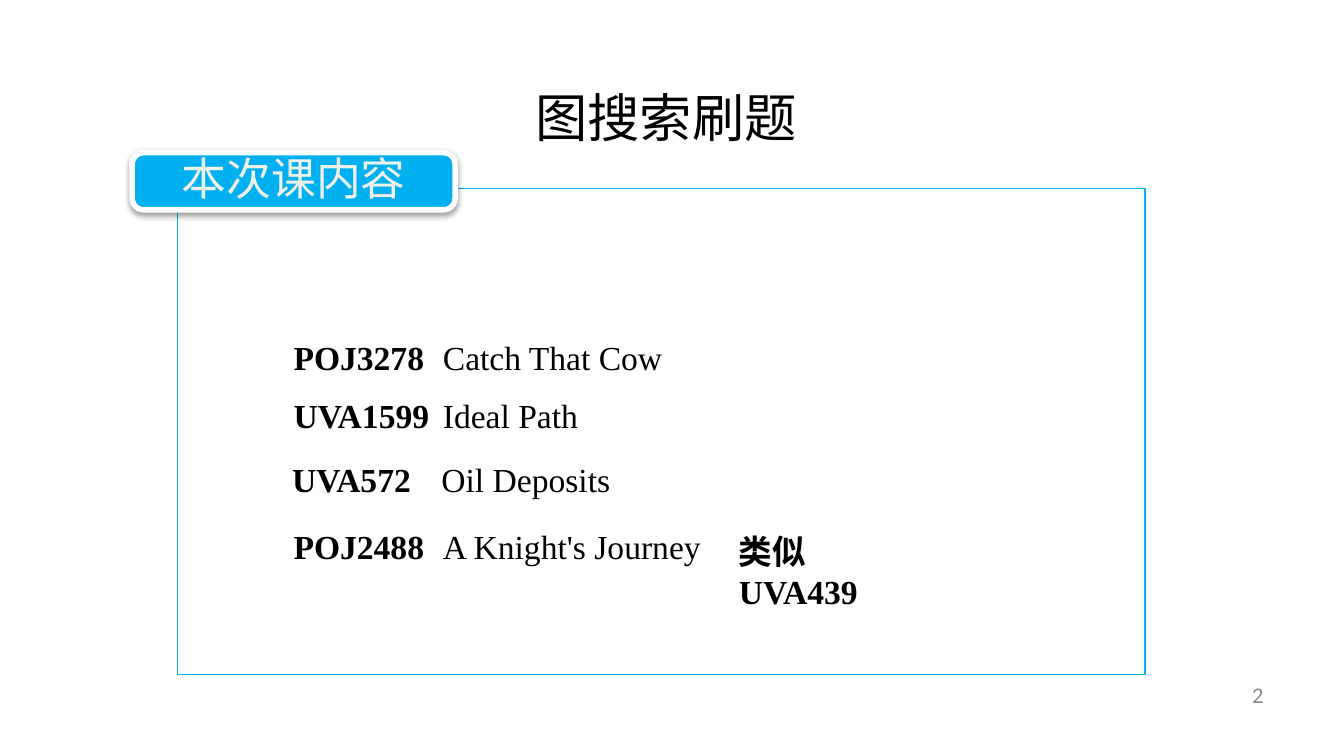
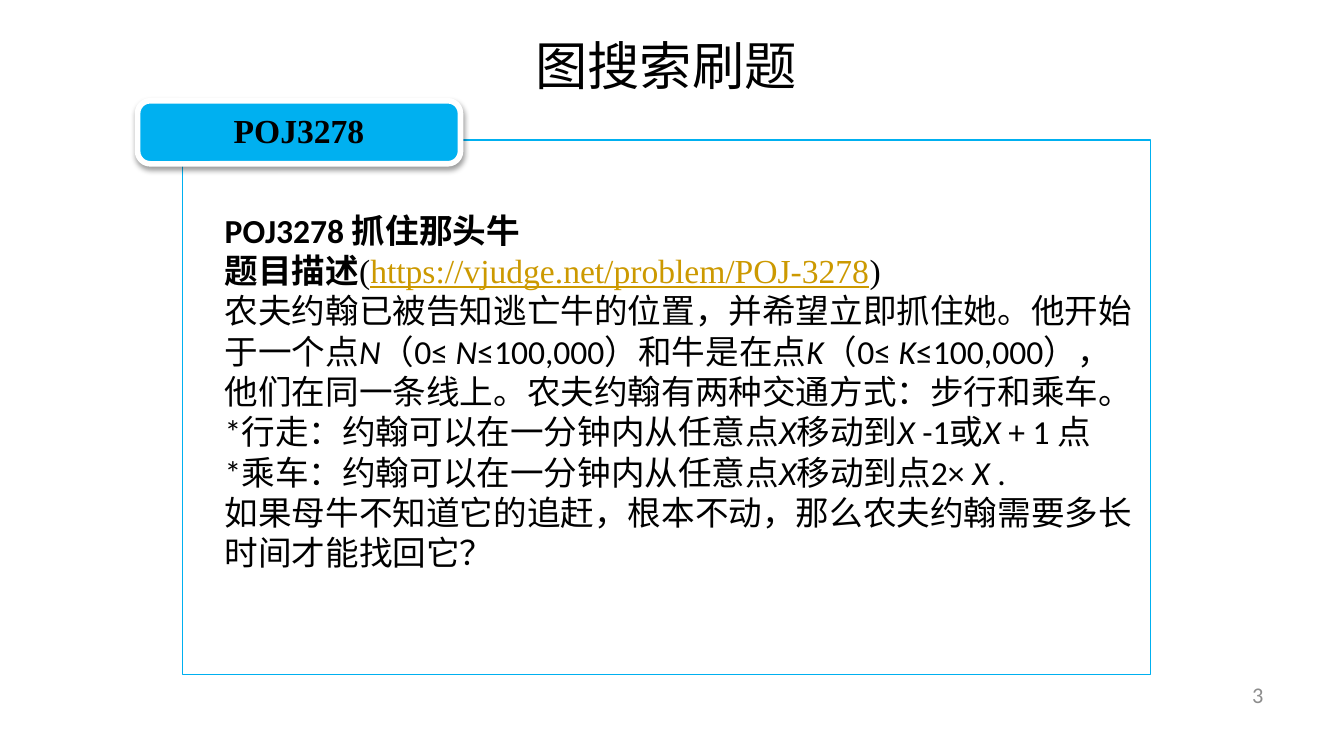
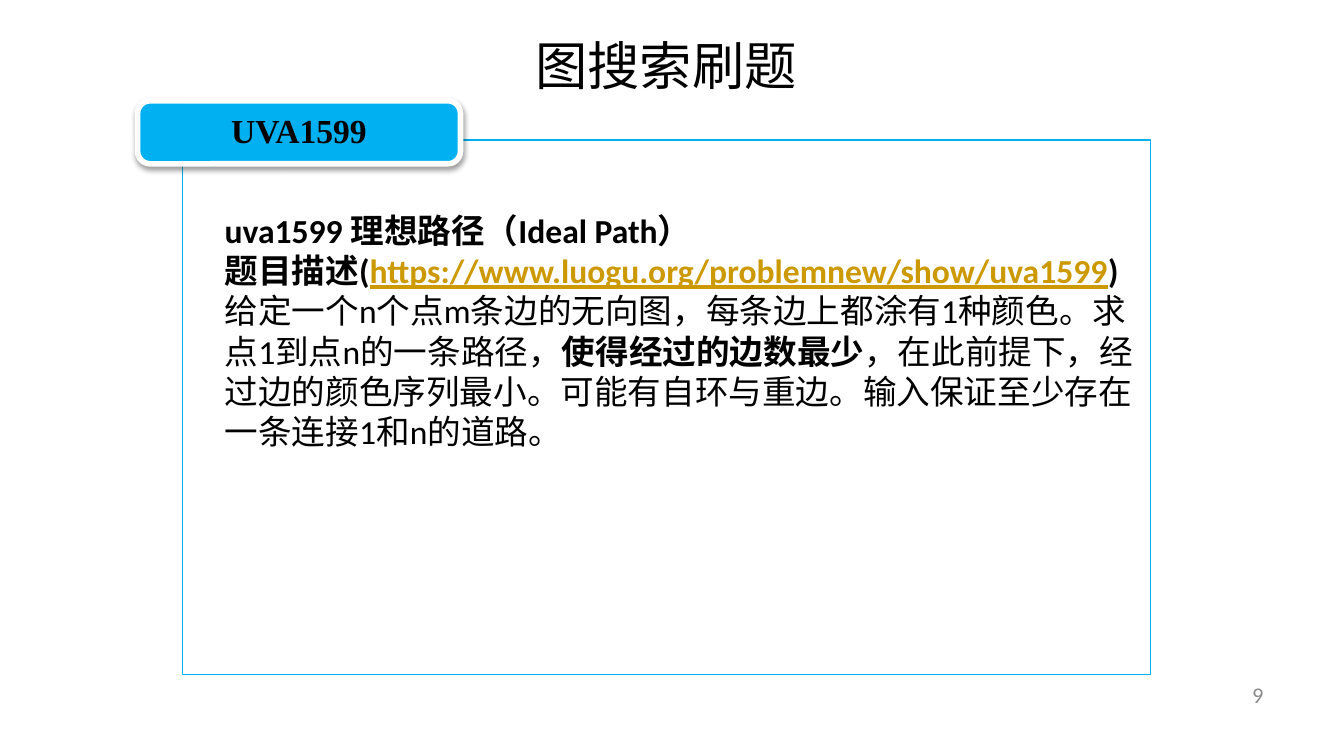
"""Build three slides of graph search exercises, each with a framed panel and a tag."""
from lxml import etree
from pptx import Presentation
from pptx.dml.color import RGBColor
from pptx.enum.shapes import MSO_SHAPE
from pptx.enum.text import MSO_ANCHOR, MSO_AUTO_SIZE, PP_ALIGN
from pptx.oxml.ns import qn
from pptx.util import Pt

RECT, ROUNDED = MSO_SHAPE.RECTANGLE, MSO_SHAPE.ROUNDED_RECTANGLE
TOP, MIDDLE = MSO_ANCHOR.TOP, MSO_ANCHOR.MIDDLE
CENTER, RIGHT, LEFT = PP_ALIGN.CENTER, PP_ALIGN.RIGHT, PP_ALIGN.LEFT
NO_FIT = MSO_AUTO_SIZE.NONE

SANS, SERIF, CJK = "Calibri", "Times New Roman", "Noto Sans CJK SC"
BLACK, WHITE, BLUE = "000000", "FFFFFF", "00B0F0"
GOLD, GREY, PALE = "CC9900", "8C8C8C", "EFF1EA"
NBSP = chr(160)


def rgb(code):
    """Turn a hex string into a colour."""
    return RGBColor.from_string(code)


def add_run(p, text, size=18, font=SANS, color=BLACK, style=""):
    """Add a run; style letters are b for bold, i for italic, u for underline."""
    r = p.add_run()
    r.text = text
    r.font.size = Pt(size)
    r.font.name = font
    r.font.color.rgb = rgb(color)
    r.font.bold = "b" in style
    r.font.italic = "i" in style
    r.font.underline = "u" in style
    etree.SubElement(r.font._element, qn("a:ea"), typeface=CJK)


slides = [
    dict(number="2", title_top=30.4, left=95, top=101, height=260.4,
         tag_top=81.8, tag_height=30.6, tag=("本次课内容", 24, SANS, PALE, ""), body=[]),
    dict(number="3", title_top=2.6, left=97.9, top=75, height=286.2,
         tag_top=54, tag_height=33.8, tag=("POJ3278", 18, SERIF, BLACK, "b"), body=[
             [("POJ3278 抓住那头牛", SANS, "b")],
             [("题目描述", SANS, "b"), ("(", SERIF, ""),
              ("https://vjudge.net/problem/POJ-3278", SERIF, "u"), (")", SERIF, "")],
             [("农夫约翰已被告知逃亡牛的位置，并希望立即抓住她。他开始于一个点", SANS, ""),
              ("N", SANS, "i"), (f"（0≤{NBSP}", SANS, ""), ("N", SANS, "i"),
              ("≤100,000）和牛是在点", SANS, ""), ("K", SANS, "i"),
              (f"（0≤{NBSP}", SANS, ""), ("K", SANS, "i"),
              ("≤100,000），他们在同一条线上。农夫约翰有两种交通方式：步行和乘车。", SANS, "")],
             [("*行走：约翰可以在一分钟内从任意点", SANS, ""), ("X", SANS, "i"),
              ("移动到", SANS, ""), ("X", SANS, "i"), (f"{NBSP}-1或", SANS, ""),
              ("X", SANS, "i"), (f"{NBSP}+ 1{NBSP}点", SANS, "")],
             [("*乘车：约翰可以在一分钟内从任意点", SANS, ""), ("X", SANS, "i"),
              (f"移动到点2×{NBSP}", SANS, ""), ("X", SANS, "i"), (f"{NBSP}.", SANS, "")],
             [("如果母牛不知道它的追赶，根本不动，那么农夫约翰需要多长时间才能找回它？", SANS, "")],
         ]),
    dict(number="9", title_top=2.6, left=97.9, top=75, height=286.2,
         tag_top=54, tag_height=33.8, tag=("UVA1599", 18, SERIF, BLACK, "b"), body=[
             [("uva1599 理想路径（Ideal Path）", SANS, "b")],
             [("题目描述(", SANS, "b"),
              ("https://www.luogu.org/problemnew/show/uva1599", SANS, "bu"),
              (")", SANS, "b")],
             [("给定一个n个点m条边的无向图，每条边上都涂有1种颜色。求点1到点n的一条路径，", SANS, ""),
              ("使得经过的边数最少", SANS, "b"),
              ("，在此前提下，经过边的颜色序列最小。可能有自环与重边。"
               "输入保证至少存在一条连接1和n的道路。", SANS, "")],
         ]),
]

problems = [
    (150.2, 176.8, "POJ3278", "Catch That Cow"),
    (150.2, 208.1, "UVA1599", "Ideal Path"),
    (149.4, 242.6, "UVA572", "Oil Deposits"),
    (150.2, 278.3, "POJ2488", "A Knight's Journey"),
]

prs = Presentation()
prs.slide_width, prs.slide_height = Pt(720), Pt(405)

for page in slides:
    s = prs.slides.add_slide(prs.slide_layouts[1 if page["body"] else 5])

    title = s.shapes.title
    title.left, title.top = Pt(238), Pt(page["title_top"])
    title.width, title.height = Pt(237.6), Pt(48.2)
    tf = title.text_frame
    tf.auto_size, tf.vertical_anchor = NO_FIT, TOP
    p = tf.paragraphs[0]
    p.alignment, p.line_spacing = CENTER, 1.35
    add_run(p, "图搜索刷题", 28, CJK)

    group = s.shapes.add_group_shape()
    s.shapes._spTree.insert(2, group._element)
    panel = group.shapes.add_shape(
        RECT, Pt(page["left"]), Pt(page["top"]), Pt(518.4), Pt(page["height"]))
    panel.shadow.inherit = False
    panel.fill.solid()
    panel.fill.fore_color.rgb = rgb(WHITE)
    fill_color = panel._element.spPr.find(qn("a:solidFill"))[0]
    etree.SubElement(fill_color, qn("a:alpha"), val="90000")
    panel.line.color.rgb = rgb(BLUE)
    panel.line.width = Pt(0.75)

    tag = group.shapes.add_shape(
        ROUNDED, Pt(page["left"] - 24.2), Pt(page["tag_top"]), Pt(173), Pt(page["tag_height"]))
    tag.adjustments[0] = 0.2
    tag.fill.solid()
    tag.fill.fore_color.rgb = rgb(BLUE)
    tag.line.color.rgb = rgb(WHITE)
    tag.line.width = Pt(3)
    tag.shadow.inherit = False
    effects = tag._element.spPr.find(qn("a:effectLst"))
    shadow = etree.SubElement(effects, qn("a:outerShdw"), blurRad=str(Pt(3.1)),
                              dist=str(Pt(1.6)), dir="5400000", rotWithShape="0")
    shadow_color = etree.SubElement(shadow, qn("a:srgbClr"), val=BLACK)
    etree.SubElement(shadow_color, qn("a:alpha"), val="38000")
    tf = tag.text_frame
    tf.word_wrap, tf.vertical_anchor = True, MIDDLE
    tf.margin_left = tf.margin_right = Pt(17.3)
    tf.margin_top = tf.margin_bottom = Pt(4.3)
    p = tf.paragraphs[0]
    p.alignment, p.line_spacing = CENTER, 0.9
    p.space_after = Pt(0.35 * page["tag"][1])
    add_run(p, *page["tag"])

    if page["body"]:
        body = s.placeholders[1]
        body.left, body.top, body.width, body.height = Pt(113.2), Pt(108.7), Pt(501.2), Pt(245)
        tf = body.text_frame
        tf.auto_size, tf.vertical_anchor = NO_FIT, TOP
        for i, line in enumerate(page["body"]):
            p = tf.add_paragraph() if i else tf.paragraphs[0]
            p.alignment, p.space_before = LEFT, Pt(0)
            pPr = p._p.get_or_add_pPr()
            pPr.set("marL", "0")
            pPr.set("indent", "0")
            etree.SubElement(pPr, qn("a:buNone"))
            for text, font, style in line:
                add_run(p, text, 18, font, GOLD if "u" in style else BLACK, style)
    else:
        for left, top, code, name in problems:
            tf = s.shapes.add_textbox(Pt(left), Pt(top), Pt(381.6), Pt(28.8)).text_frame
            tf.word_wrap = True
            p = tf.paragraphs[0]
            tabs = etree.SubElement(p._p.get_or_add_pPr(), qn("a:tabLst"))
            etree.SubElement(tabs, qn("a:tab"), pos=str(Pt(80)), algn="l")
            add_run(p, code + "\t", 18, SERIF, BLACK, "b")
            add_run(p, name, 18, SERIF)
        tf = s.shapes.add_textbox(Pt(388.8), Pt(281), Pt(108), Pt(28.8)).text_frame
        tf.word_wrap = True
        add_run(tf.paragraphs[0], "类似UVA439", 18, SERIF, BLACK, "b")

    tf = s.shapes.add_textbox(Pt(516), Pt(361.5), Pt(168), Pt(21.6)).text_frame
    tf.word_wrap, tf.vertical_anchor = True, MIDDLE
    p = tf.paragraphs[0]
    p.alignment = RIGHT
    add_run(p, page["number"], 12, SANS, GREY)

prs.save("out.pptx")
